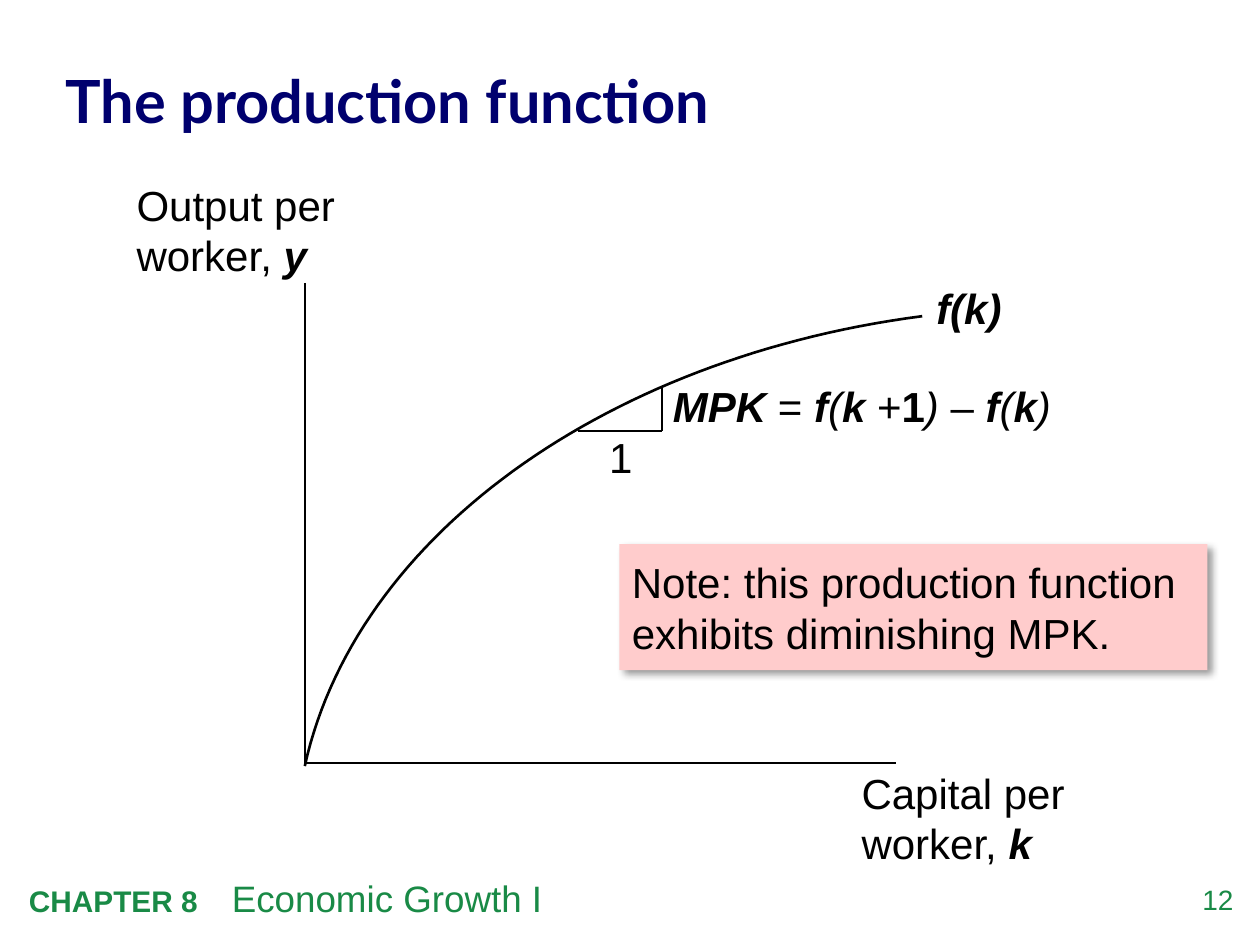
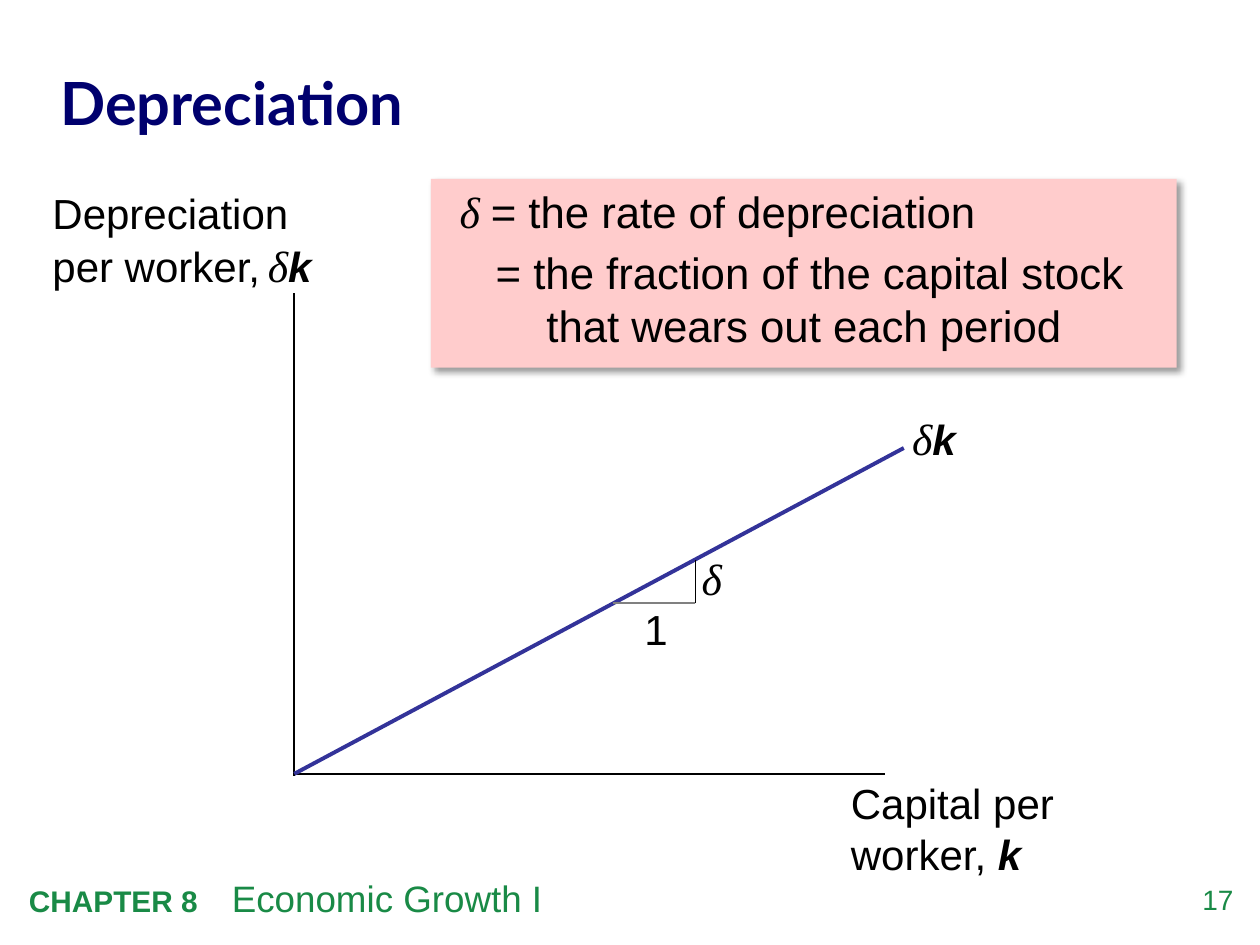
import pptx
import pptx.dml.color
import pptx.enum.shapes
import pptx.enum.text
import pptx.oxml.ns
import pptx.util
from lxml import etree

Pt = pptx.util.Pt
qn = pptx.oxml.ns.qn

COLORS = {
    "text": "000000",
    "title": "00006E",
    "footer": "198A46",
    "note": "FFCCCC",
    "line": "333399",
    "gray": "808080",
}

# style: font, size, bold, italic, colour
STYLES = {
    "plain": ("Arial", 24, False, False, "text"),
    "bold": ("Arial", 24, True, False, "text"),
    "italic": ("Arial", 24, False, True, "text"),
    "var": ("Arial", 24, True, True, "text"),
    "thin": ("Arial", 16, False, False, "text"),
    "delta": ("Times New Roman", 25, False, True, "text"),
    "definition": ("Arial", 25, False, False, "text"),
    "title": ("Lato", 34, True, False, "title"),
    "chapter": ("Arial", 17, True, False, "footer"),
    "topic": ("Arial", 21, False, False, "footer"),
    "number": ("Arial", 16, False, False, "footer"),
}

MIDDLE = pptx.enum.text.MSO_ANCHOR.MIDDLE
TOP = pptx.enum.text.MSO_ANCHOR.TOP
LEFT = pptx.enum.text.PP_ALIGN.LEFT
RIGHT = pptx.enum.text.PP_ALIGN.RIGHT


def rgb(name):
    return pptx.dml.color.RGBColor.from_string(COLORS[name])


def write(p, runs):
    """Fill a paragraph with (text, style) runs."""
    for text, style in runs:
        font_name, size, bold, italic, color = STYLES[style]
        r = p.add_run()
        r.text = text
        r.font.name = font_name
        r.font.size = Pt(size)
        r.font.bold = bold
        r.font.italic = italic
        r.font.color.rgb = rgb(color)


def set_frame(tf, anchor, inset_x=0, inset_y=0):
    tf.word_wrap = True
    tf.vertical_anchor = anchor
    tf.margin_left = tf.margin_right = Pt(inset_x)
    tf.margin_top = tf.margin_bottom = Pt(inset_y)


def add_label(slide, box, runs, anchor=MIDDLE, align=LEFT):
    """Add a one-paragraph text box and return the paragraph."""
    sp = slide.shapes.add_textbox(*map(Pt, box))
    set_frame(sp.text_frame, anchor)
    p = sp.text_frame.paragraphs[0]
    p.alignment = align
    write(p, runs)
    return p


def add_line(slide, x1, y1, x2, y2, color="text", width=1):
    cxn = slide.shapes.add_connector(
        pptx.enum.shapes.MSO_CONNECTOR.STRAIGHT, Pt(x1), Pt(y1), Pt(x2), Pt(y2))
    cxn.line.color.rgb = rgb(color)
    cxn.line.width = Pt(width)
    etree.SubElement(cxn._element.spPr, qn("a:effectLst"))


def add_curve(slide, controls, steps=60):
    """Draw an open cubic Bezier curve as a fine polyline."""
    points = []
    for i in range(steps + 1):
        t = i / steps
        weights = ((1 - t) ** 3, 3 * t * (1 - t) ** 2, 3 * t ** 2 * (1 - t), t ** 3)
        points.append(tuple(
            Pt(sum(w * c[axis] for w, c in zip(weights, controls))) for axis in (0, 1)))
    builder = slide.shapes.build_freeform(*points[0])
    builder.add_line_segments(points[1:], close=False)
    sp = builder.convert_to_shape()
    sp.fill.background()
    sp.line.color.rgb = rgb("text")
    sp.line.width = Pt(1.5)
    sp.shadow.inherit = False


def add_drop_shadow(sp):
    sp.shadow.inherit = False
    effects = sp._element.spPr.find(qn("a:effectLst"))
    shadow = etree.SubElement(
        effects, qn("a:outerShdw"), blurRad=str(Pt(4)), dist=str(Pt(3)),
        dir=str(45 * 60000), algn="tl", rotWithShape="0")
    color = etree.SubElement(shadow, qn("a:srgbClr"), val=COLORS["text"])
    etree.SubElement(color, qn("a:alpha"), val="40000")


def add_note(slide, box, paragraphs, inset_y):
    """Add a shadowed pink box; return its paragraphs."""
    sp = slide.shapes.add_shape(
        pptx.enum.shapes.MSO_SHAPE.RECTANGLE, *map(Pt, box))
    sp.fill.solid()
    sp.fill.fore_color.rgb = rgb("note")
    sp.line.fill.background()
    add_drop_shadow(sp)
    tf = sp.text_frame
    set_frame(tf, TOP, 7.2, inset_y)
    for i, runs in enumerate(paragraphs):
        p = tf.add_paragraph() if i else tf.paragraphs[0]
        p.alignment = LEFT
        p.space_before = Pt(5 if i else 0)
        write(p, runs)
    return tf.paragraphs


def set_hanging(p, margin, first_line):
    """Place the first line and the following lines at two left offsets."""
    pPr = p._p.get_or_add_pPr()
    pPr.set("marL", str(Pt(margin)))
    pPr.set("indent", str(Pt(first_line - margin)))


def add_footer(slide, number):
    add_label(slide, (665, 504.5, 39.7, 23), [(number, "number")], TOP, RIGHT)
    p = add_label(slide, (16.5, 500.4, 575, 25),
                  [("CHAPTER 8\t", "chapter"), ("Economic Growth I", "topic")], TOP)
    tabs = etree.SubElement(p._p.get_or_add_pPr(), qn("a:tabLst"))
    etree.SubElement(tabs, qn("a:tab"), pos=str(Pt(116)), algn="l")


def new_slide(prs, title, title_box, number):
    slide = prs.slides.add_slide(prs.slide_layouts[6])
    add_footer(slide, number)
    p = add_label(slide, title_box, [(title, "title")])
    p.line_spacing = 1.05
    return slide


def add_axes(slide, x, y, label_box, label):
    """Draw both axes from the origin (x, y) with their labels."""
    add_line(slide, x, y - 274.5, x, y + 1)
    add_line(slide, x, y, x + 337.5, y)
    add_label(slide, label_box, label)
    add_label(slide, (x + 318, y + 2, 126, 58),
              [("Capital per worker, ", "plain"), ("k", "var")])


def add_slope_step(slide, x, y, run, rise, base_color="text"):
    """Draw the run of 1 and the rise that measure a slope."""
    add_line(slide, x, y, x + run, y, base_color)
    add_line(slide, x + run, y, x + run, y - rise)
    add_label(slide, (x + 17.8, y, 24, 29), [("1", "plain")])


def production_slide(prs):
    slide = new_slide(prs, "The production function", (37.5, 24.5, 495, 62.5), "12")
    add_axes(slide, 174.3, 436.2, (78, 102.5, 126, 57.5),
             [("Output per worker, ", "plain"), ("y", "var")])
    add_curve(slide, [(527, 180.7), (344.9, 204.5), (203, 307.4), (174.2, 437.8)])
    add_label(slide, (535, 161.5, 60, 29), [("f(k)", "var")])
    add_note(slide, (354, 311, 336, 72),
             [[("Note: this production function exhibits diminishing MPK.", "plain")]], 7.2)
    add_slope_step(slide, 330.3, 246.2, 48, 24.5)
    add_label(slide, (384.5, 217.5, 245.5, 29), [
        ("MPK", "var"), (" = ", "plain"), ("f", "var"), ("(", "italic"), ("k ", "var"),
        ("+", "plain"), ("1", "bold"), (")", "italic"), (" – ", "plain"),
        ("f", "var"), ("(", "italic"), ("k", "var"), (")", "italic")])


def depreciation_slide(prs):
    slide = new_slide(prs, "Depreciation", (34.5, 24.5, 643, 65), "17")
    delta_k = [("δ", "delta"), ("k", "var")]
    add_axes(slide, 168.2, 442.2, (30, 107.3, 168.5, 59),
             [("Depreciation per worker,", "plain"), (" ", "thin")] + delta_k)
    add_label(slide, (521.3, 235.5, 78, 30), delta_k)
    add_line(slide, 168.2, 442.2, 516.5, 256, "line", 2.25)
    rate, fraction = add_note(slide, (246.2, 102.2, 426.2, 108), [
        [("δ ", "delta"), ("= the rate of depreciation", "definition")],
        [("= the fraction of the capital stock that wears out each period",
          "definition")]], 3.6)
    set_hanging(rate, 59, 9.4)
    set_hanging(fraction, 59, 30)
    add_slope_step(slide, 350.4, 344.8, 47, 25, "gray")
    add_label(slide, (401, 315.5, 24.5, 30), [("δ", "delta")])


def main():
    prs = pptx.Presentation()
    prs.slide_width, prs.slide_height = Pt(720), Pt(540)
    production_slide(prs)
    depreciation_slide(prs)
    prs.save("out.pptx")


if __name__ == "__main__":
    main()
